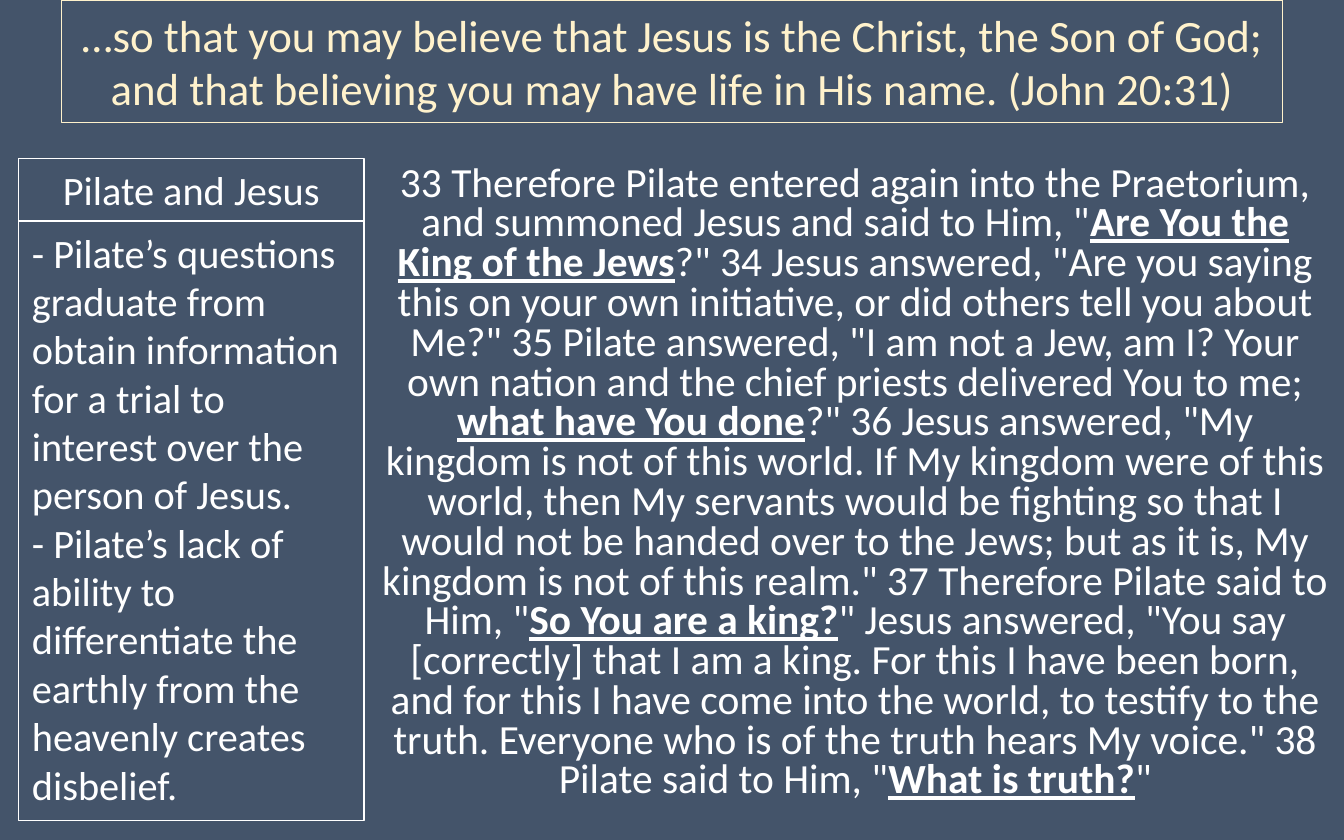
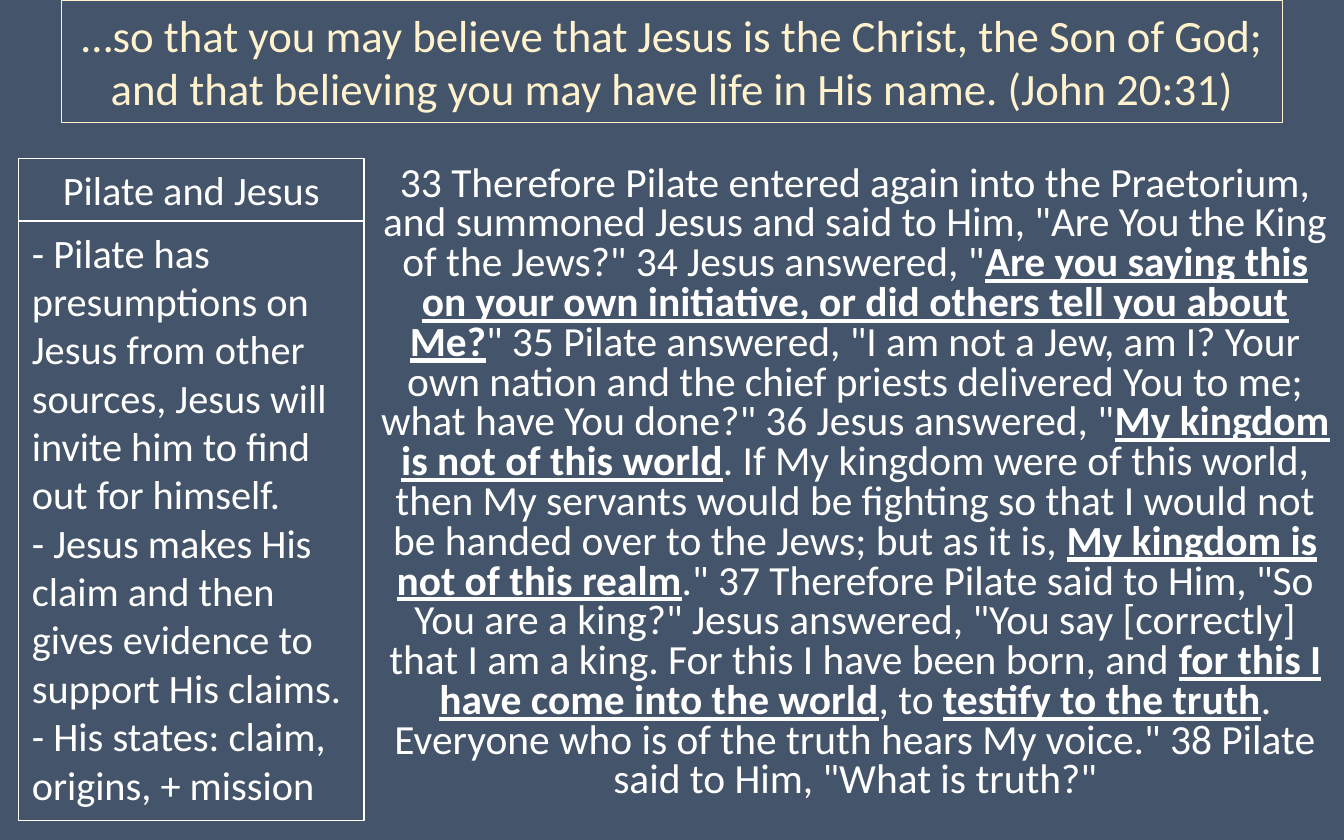
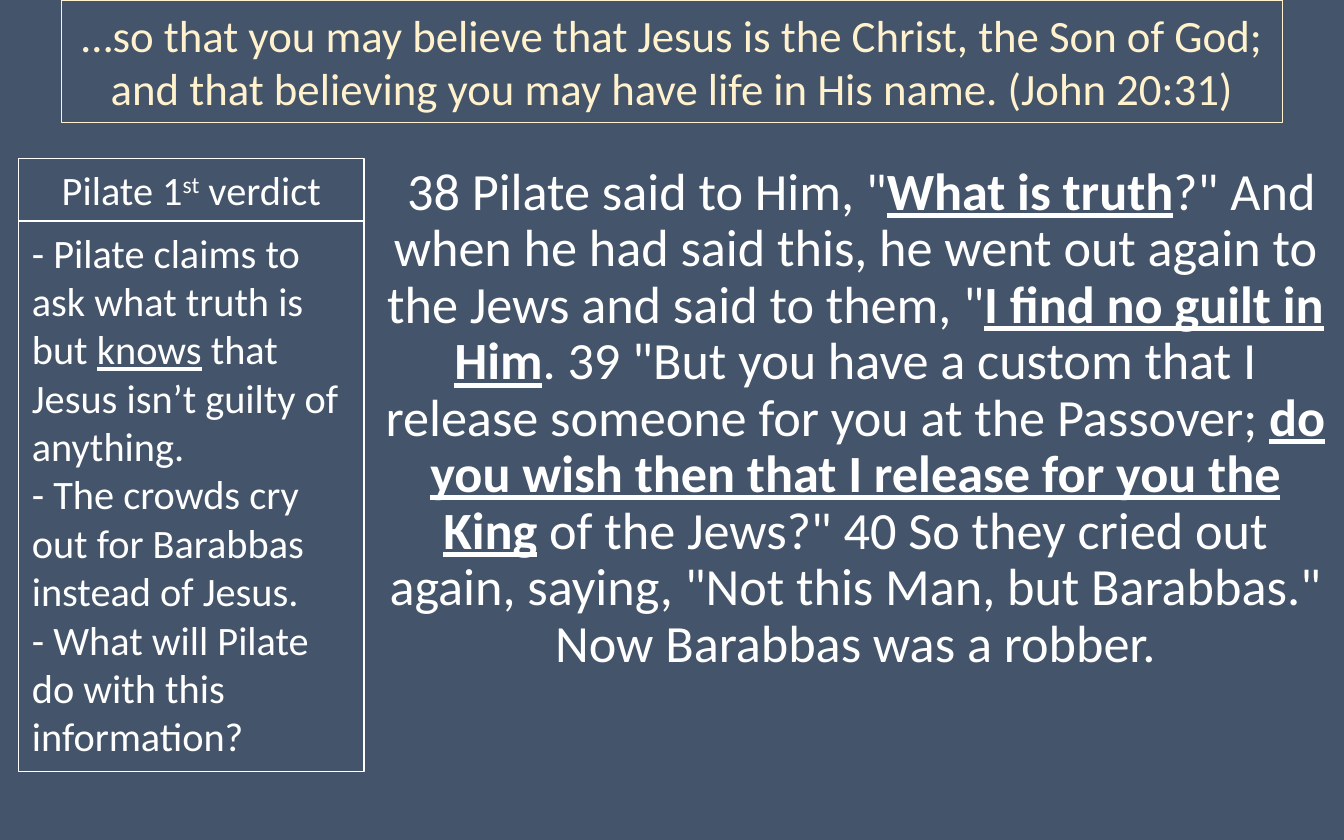
from pptx import Presentation
from pptx.dml.color import RGBColor
from pptx.enum.shapes import MSO_SHAPE as Shape
from pptx.enum.text import MSO_ANCHOR as Anchor, MSO_AUTO_SIZE as AutoSize, PP_ALIGN as Align
from pptx.util import Pt

COLORS = {"background": "44546A", "text": "FFFFFF", "verse": "FFF2CC"}
FONT = "Calibri"
WIDTH, HEIGHT = 720, 450
TOP = 85
NOTES_LEFT, NOTES_WIDTH = 10, 185
HEADING_HEIGHT = 33.5
PASSAGE_LEFT = 196.5

VERSE = ("…so that you may believe that Jesus is the Christ, the Son of God; "
         "and that believing you may have life in His name. (John 20:31)")

SLIDES = [
    {
        "heading": "Pilate and Jesus",
        "notes": [
            "- Pilate’s questions graduate from obtain information for a trial to "
            "interest over the person of Jesus.",
            "- Pilate’s lack of ability to differentiate the earthly from the heavenly "
            "creates disbelief.",
        ],
        "notes_height": 321,
        "verses": [
            '33 Therefore Pilate entered again into the Praetorium, and summoned Jesus and '
            'said to Him, "*Are You the King of the Jews*?"',
            '34 Jesus answered, "Are you saying this on your own initiative, or did others '
            'tell you about Me?"',
            '35 Pilate answered, "I am not a Jew, am I? Your own nation and the chief priests '
            'delivered You to me; *what have You done*?"',
            '36 Jesus answered, "My kingdom is not of this world. If My kingdom were of this '
            'world, then My servants would be fighting so that I would not be handed over to '
            'the Jews; but as it is, My kingdom is not of this realm."',
            '37 Therefore Pilate said to Him, "*So You are a king?*" Jesus answered, "You say '
            '[correctly] that I am a king. For this I have been born, and for this I have come '
            'into the world, to testify to the truth. Everyone who is of the truth hears My '
            'voice."',
            '38 Pilate said to Him, "*What is truth?*"',
        ],
        "passage_format": {"size": 22.2, "spacing": 0.8},
    },
    {
        "heading": "Pilate and Jesus",
        "notes": [
            "- Pilate has presumptions on Jesus from other sources, Jesus will invite him "
            "to find out for himself.",
            "- Jesus makes His claim and then gives evidence to support His claims.",
            "- His states: claim, origins, + mission",
        ],
        "notes_height": 321,
        "verses": [
            '33 Therefore Pilate entered again into the Praetorium, and summoned Jesus and '
            'said to Him, "Are You the King of the Jews?"',
            '34 Jesus answered, "*Are you saying this on your own initiative, or did others '
            'tell you about Me?*"',
            '35 Pilate answered, "I am not a Jew, am I? Your own nation and the chief priests '
            'delivered You to me; what have You done?"',
            '36 Jesus answered, "*My kingdom is not of this world*. If My kingdom were of this '
            'world, then My servants would be fighting so that I would not be handed over to '
            'the Jews; but as it is, *My kingdom is not of this realm*."',
            '37 Therefore Pilate said to Him, "So You are a king?" Jesus answered, "You say '
            '[correctly] that I am a king. For this I have been born, and *for this I have '
            'come into the world*, to *testify to the truth*. Everyone who is of the truth '
            'hears My voice."',
            '38 Pilate said to Him, "What is truth?"',
        ],
        "passage_format": {"size": 22.2, "spacing": 0.8},
    },
    {
        "heading": "Pilate 1*st* verdict",
        "notes": [
            "- Pilate claims to ask what truth is but *knows* that Jesus isn’t guilty of "
            "anything.",
            "- The crowds cry out for Barabbas instead of Jesus.",
            "- What will Pilate do with this information?",
        ],
        "notes_height": 295,
        "verses": [
            ' 38 Pilate said to Him, "*What is truth*?" And when he had said this, he went out '
            'again to the Jews and said to them, "*I find no guilt in Him*.',
            '39 "But you have a custom that I release someone for you at the Passover; *do you '
            'wish then that I release for you the King* of the Jews?"',
            '40 So they cried out again, saying, "Not this Man, but Barabbas." Now Barabbas '
            'was a robber.',
        ],
        "passage_format": {"size": 28, "spacing": 0.9},
    },
]


def write_text(frame, *paragraphs, size=21.6, color="text", align=Align.LEFT,
               anchor=Anchor.TOP, spacing=None, bold=False, underline=False,
               superscript=False):
    """Fill a frame; bold, underline and superscript apply to the parts between asterisks."""
    frame.word_wrap = True
    frame.vertical_anchor = anchor
    for index, content in enumerate(paragraphs):
        paragraph = frame.add_paragraph() if index else frame.paragraphs[0]
        paragraph.alignment = align
        paragraph.line_spacing = spacing
        for position, part in enumerate(content.split("*")):
            marked = position % 2 == 1
            run = paragraph.add_run()
            run.text = part
            font = run.font
            font.name = FONT
            font.size = Pt(size)
            font.color.rgb = RGBColor.from_string(COLORS[color])
            font.bold = marked and bold
            font.underline = marked and underline
            if marked and superscript:
                run._r.get_or_add_rPr().set("baseline", "30000")


class Deck:
    def __init__(self):
        self.presentation = Presentation()
        self.presentation.slide_width = Pt(WIDTH)
        self.presentation.slide_height = Pt(HEIGHT)
        self.slide = None

    def new_slide(self):
        self.slide = self.presentation.slides.add_slide(self.presentation.slide_layouts[6])
        fill = self.slide.background.fill
        fill.solid()
        fill.fore_color.rgb = RGBColor.from_string(COLORS["background"])

    def frame(self, box, *paragraphs, color="text", **text_format):
        """Draw an outlined, unfilled rectangle with text in the outline's colour."""
        panel = self.slide.shapes.add_shape(Shape.RECTANGLE, *map(Pt, box))
        panel.shadow.inherit = False
        panel.fill.background()
        panel.line.color.rgb = RGBColor.from_string(COLORS[color])
        panel.line.width = Pt(0.75)
        write_text(panel.text_frame, *paragraphs, color=color, **text_format)
        panel.text_frame.auto_size = AutoSize.SHAPE_TO_FIT_TEXT

    def banner(self):
        self.frame((33, 0, 654, 65.5), VERSE, color="verse", size=24,
                   align=Align.CENTER, anchor=Anchor.MIDDLE)

    def notes(self, heading, points, height):
        self.frame((NOTES_LEFT, TOP, NOTES_WIDTH, HEADING_HEIGHT), heading,
                   align=Align.CENTER, superscript=True)
        self.frame((NOTES_LEFT, TOP + HEADING_HEIGHT, NOTES_WIDTH, height), *points,
                   underline=True)

    def passage(self, verses, **text_format):
        box = (PASSAGE_LEFT, TOP, WIDTH - PASSAGE_LEFT, HEIGHT - TOP)
        passage = self.slide.shapes.add_textbox(*map(Pt, box))
        write_text(passage.text_frame, " ".join(verses), align=Align.CENTER,
                   bold=True, underline=True, **text_format)


def main():
    deck = Deck()
    for content in SLIDES:
        deck.new_slide()
        deck.passage(content["verses"], **content["passage_format"])
        deck.banner()
        deck.notes(content["heading"], content["notes"], content["notes_height"])
    deck.presentation.save("out.pptx")


if __name__ == "__main__":
    main()
